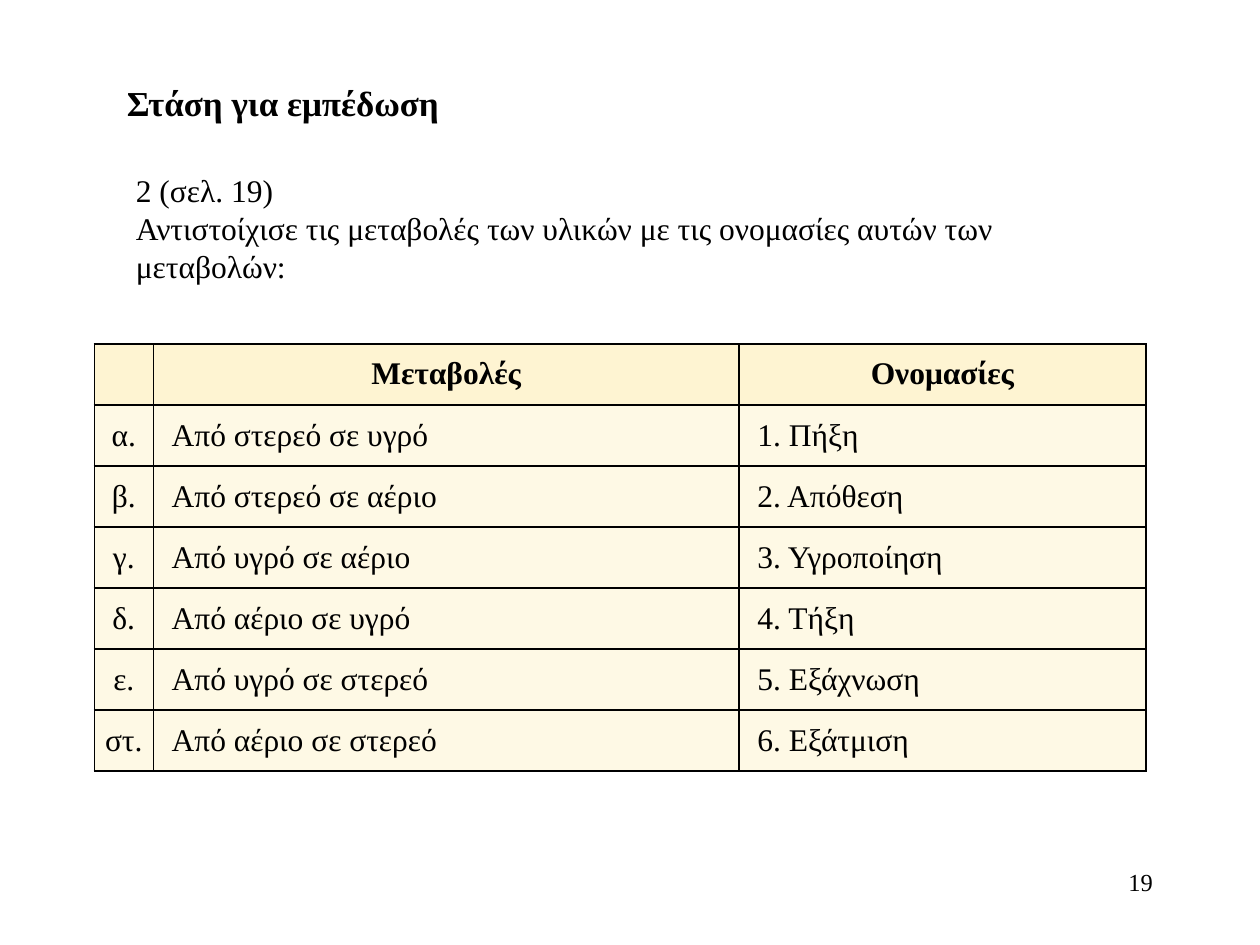
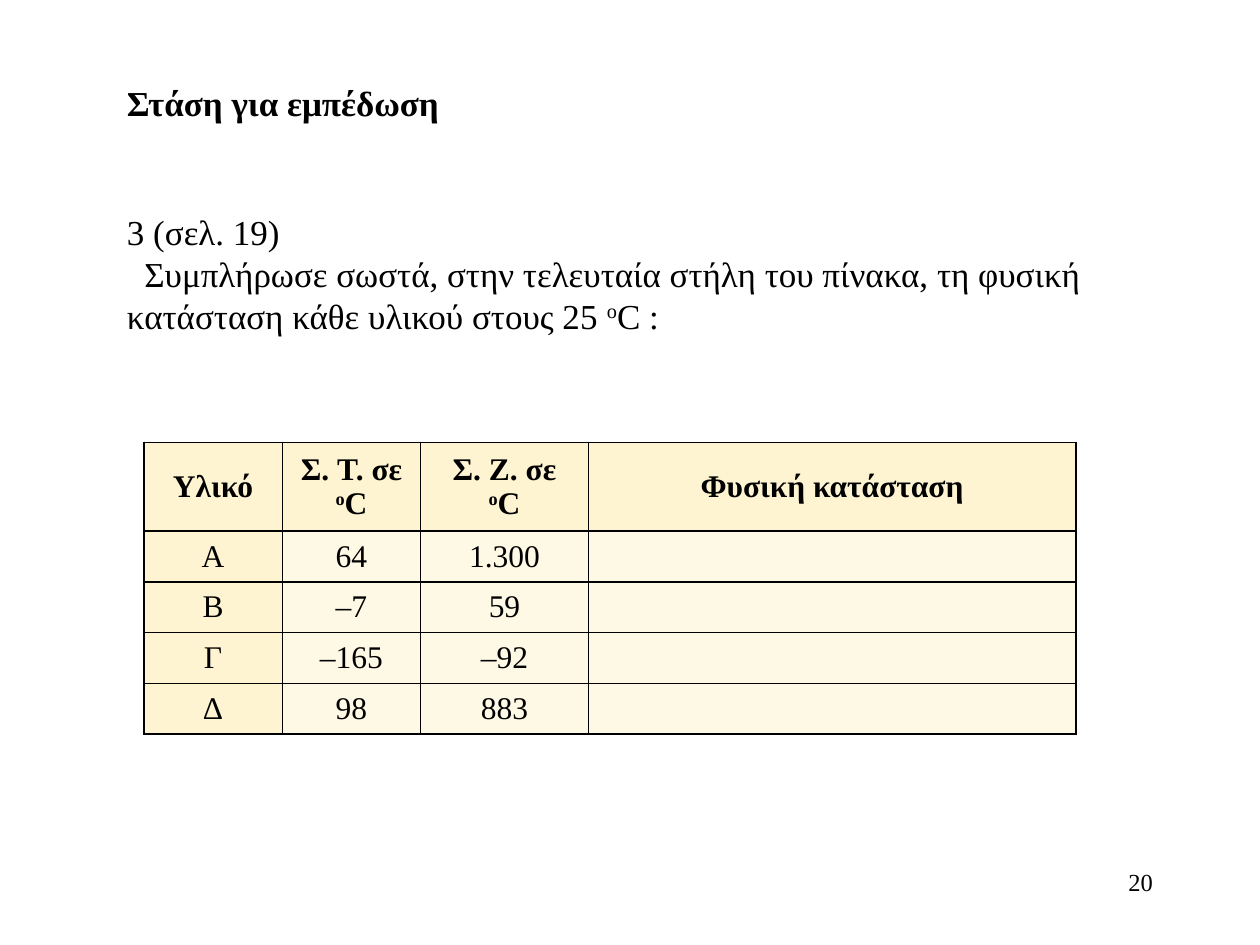
import pptx
import pptx.util
import pptx.dml.color
import pptx.enum.text
import pptx.oxml
import pptx.oxml.ns
from pptx.util import Cm

ALIGN = pptx.enum.text.PP_ALIGN

# Content: "^" encloses superscript text
TITLE = "Στάση για εμπέδωση"
SLIDES = [
    {
        "number": "19",
        "question": ["2 (σελ. 19)",
                     "Αντιστοίχισε τις μεταβολές των υλικών με τις ονομασίες "
                     "αυτών των μεταβολών:"],
        "question_box": (2.49, 3.33, 19.61, 2.57),
        "question_size": 18,
        "first_line": 0,
        "table_at": (1.9, 6.93),
        "columns": [1.19, 11.81, 8.2],
        "row_heights": (1.23, 1.23),
        "margins": (0.05, 0.05),
        "left_columns": {1, 2},
        "label_columns": set(),
        "rows": [
            ("", "Μεταβολές", "Ονομασίες"),
            ("α.", "Από στερεό σε υγρό", "1. Πήξη"),
            ("β.", "Από στερεό σε αέριο", "2. Απόθεση"),
            ("γ.", "Από υγρό σε αέριο", "3. Υγροποίηση"),
            ("δ.", "Από αέριο σε υγρό", "4. Τήξη"),
            ("ε.", "Από υγρό σε στερεό", "5. Εξάχνωση"),
            ("στ.", "Από αέριο σε στερεό", "6. Εξάτμιση"),
        ],
    },
    {
        "number": "20",
        "question": ["3 (σελ. 19)",
                     "Συμπλήρωσε σωστά, στην τελευταία στήλη του πίνακα, τη "
                     "φυσική κατάσταση κάθε υλικού στους 25 ^o^C :"],
        "question_box": (2.31, 4.11, 19.81, 2.82),
        "question_size": 20,
        "first_line": 0.35,
        "table_at": (2.9, 8.92),
        "columns": [2.79, 2.79, 3.38, 9.83],
        "row_heights": (1.78, 1.02),
        "margins": (0.25, 0.13),
        "left_columns": set(),
        "label_columns": {0},
        "rows": [
            ("Υλικό", "Σ. T. σε ^o^C", "Σ. Ζ. σε ^o^C", "Φυσική κατάσταση"),
            ("Α", "64", "1.300", ""),
            ("Β", "–7", "59", ""),
            ("Γ", "–165", "–92", ""),
            ("Δ", "98", "883", ""),
        ],
    },
]

THEME = {
    "font": "Times New Roman",
    "text": "000000",
    "header": "FEF4D2",
    "body": "FEF9E5",
    "border": "000000",
    "border_pt": 1,
    "title_pt": 20,
    "table_pt": 18,
    "number_pt": 14,
    "cell_indent": 0.32,
}


def rgb(name):
    return pptx.dml.color.RGBColor.from_string(THEME[name])


def write(p, text, size, bold=False, align=ALIGN.LEFT):
    """Fill a paragraph, raising every part enclosed in ^."""
    p.alignment = align
    for i, part in enumerate(text.split("^")):
        if not part:
            continue
        r = p.add_run()
        r.text = part
        r.font.name = THEME["font"]
        r.font.size = pptx.util.Pt(size)
        r.font.bold = bold
        r.font.color.rgb = rgb("text")
        if i % 2:
            r.font._element.set("baseline", "30000")


def add_text(s, box, lines, size, wrap=True, **style):
    tf = s.shapes.add_textbox(*map(Cm, box)).text_frame
    tf.word_wrap = wrap
    for i, line in enumerate(lines):
        p = tf.add_paragraph() if i else tf.paragraphs[0]
        write(p, line, size, **style)
    return tf


def add_borders(cell):
    tc_pr = cell._tc.get_or_add_tcPr()
    width = pptx.util.Pt(THEME["border_pt"])
    for i, side in enumerate(("lnL", "lnR", "lnT", "lnB")):
        tc_pr.insert(i, pptx.oxml.parse_xml(
            f'<a:{side} {pptx.oxml.ns.nsdecls("a")} w="{width}"><a:solidFill>'
            f'<a:srgbClr val="{THEME["border"]}"/></a:solidFill></a:{side}>'))


def add_table(s, data):
    rows, columns = data["rows"], data["columns"]
    head, body = data["row_heights"]
    heights = [head] + [body] * (len(rows) - 1)
    table = s.shapes.add_table(len(rows), len(columns),
                               *map(Cm, data["table_at"]),
                               Cm(sum(columns)), Cm(sum(heights))).table
    table.first_row = table.horz_banding = False
    for column, width in zip(table.columns, columns):
        column.width = Cm(width)
    side, edge = data["margins"]
    for i, (row, height) in enumerate(zip(rows, heights)):
        table.rows[i].height = Cm(height)
        for j, text in enumerate(row):
            cell = table.cell(i, j)
            is_head = i == 0
            is_left = not is_head and j in data["left_columns"]
            cell.margin_left = Cm(side + THEME["cell_indent"] * is_left)
            cell.margin_right = Cm(side)
            cell.margin_top = cell.margin_bottom = Cm(edge)
            cell.vertical_anchor = pptx.enum.text.MSO_ANCHOR.MIDDLE
            shaded = is_head or j in data["label_columns"]
            cell.fill.solid()
            cell.fill.fore_color.rgb = rgb("header" if shaded else "body")
            add_borders(cell)
            write(cell.text_frame.paragraphs[0], text, THEME["table_pt"],
                  bold=is_head, align=ALIGN.LEFT if is_left else ALIGN.CENTER)


def build_slide(prs, data):
    s = prs.slides.add_slide(prs.slide_layouts[6])
    # Title and slide number
    add_text(s, (2.31, 1.52, 6.86, 1.12), [TITLE], THEME["title_pt"],
             wrap=False, bold=True)
    add_text(s, (18.21, 17.35, 5.28, 1.27), [data["number"]],
             THEME["number_pt"], align=ALIGN.RIGHT)
    # Question, with its second paragraph indented where needed
    tf = add_text(s, data["question_box"], data["question"],
                  data["question_size"])
    if data["first_line"]:
        p_pr = tf.paragraphs[1]._p.get_or_add_pPr()
        p_pr.set("indent", str(Cm(data["first_line"])))
    add_table(s, data)


def main():
    prs = pptx.Presentation()
    prs.slide_width, prs.slide_height = Cm(25.4), Cm(19.05)
    for data in SLIDES:
        build_slide(prs, data)
    prs.save("out.pptx")


if __name__ == "__main__":
    main()
